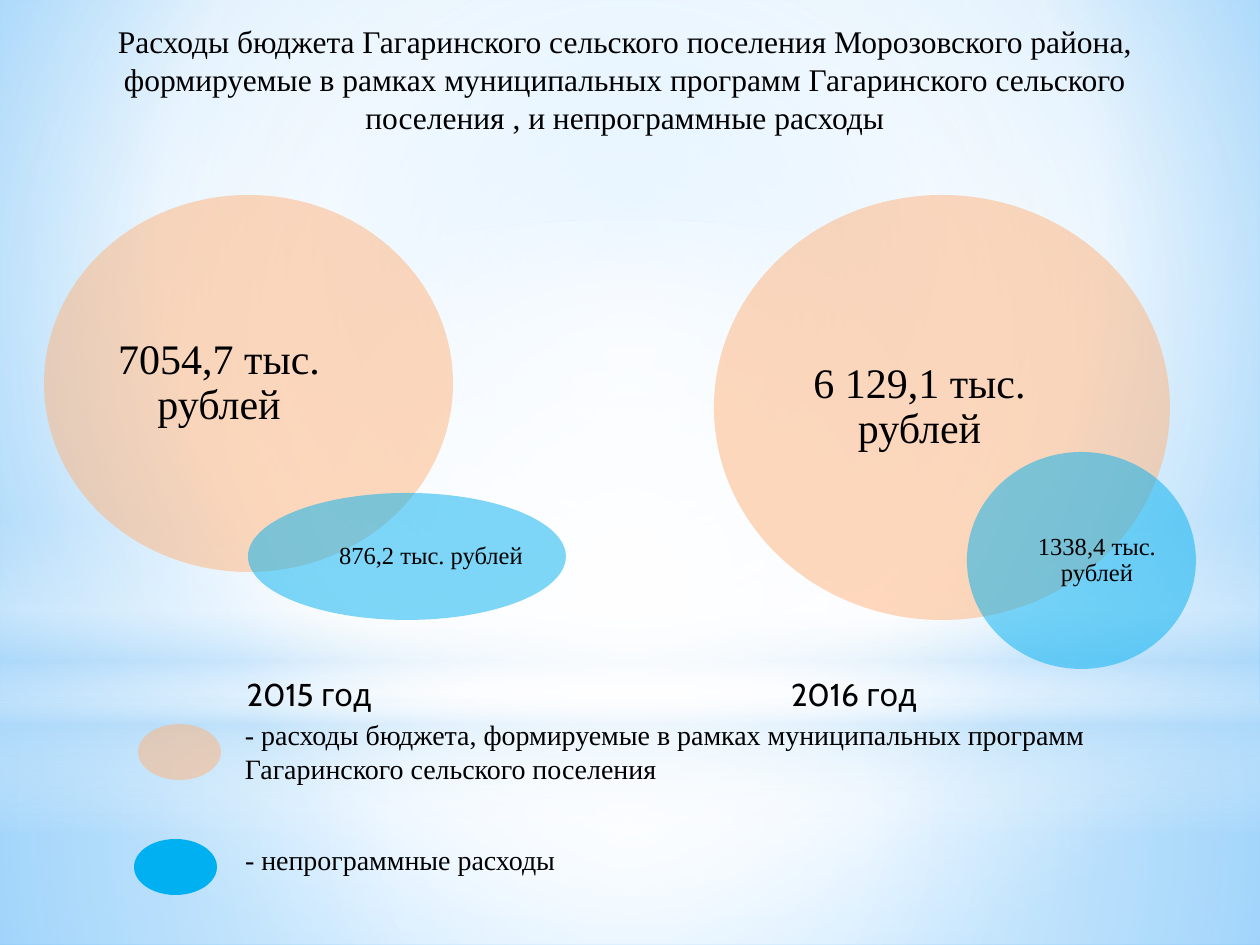
from pptx import Presentation
from pptx.dml.color import RGBColor
from pptx.enum.shapes import MSO_SHAPE as Shape
from pptx.enum.text import MSO_ANCHOR as Anchor, PP_ALIGN as Align
from pptx.oxml import parse_xml
from pptx.oxml.ns import nsdecls, qn
from pptx.util import Emu, Pt
from lxml.etree import SubElement

PX = 914400 / 126
WIDTH, HEIGHT = 1260, 945

BLACK = RGBColor(0x00, 0x00, 0x00)
WHITE = RGBColor(0xFF, 0xFF, 0xFF)
PEACH = RGBColor(0xFF, 0xB3, 0x7A)
AZURE = RGBColor(0x00, 0xB0, 0xF0)
SKY = RGBColor(0x9E, 0xD5, 0xFF)
DEEP_SKY = RGBColor(0x5B, 0xB9, 0xFF)
MIST = RGBColor(0xB4, 0xDC, 0xFA)

SERIF = "Times New Roman"
SANS = "Cabin"


def px(length):
    return Emu(round(length * PX))


def place(shape, box):
    shape.left, shape.top, shape.width, shape.height = map(px, box)


def radial(left=50, top=50, right=50, bottom=50):
    return (f'<a:path path="circle"><a:fillToRect l="{left * 1000}" t="{top * 1000}" '
            f'r="{right * 1000}" b="{bottom * 1000}"/></a:path>')


def linear(degrees):
    return f'<a:lin ang="{degrees * 60000}" scaled="0"/>'


def paint_gradient(owner, stops, direction):
    """Swap the solid fill inside owner for (position, colour, opacity) stops."""
    marks = "".join(
        f'<a:gs pos="{position * 1000}"><a:srgbClr val="{color}">'
        f'<a:alpha val="{opacity * 1000}"/></a:srgbClr></a:gs>'
        for position, color, opacity in stops)
    gradient = parse_xml(f'<a:gradFill {nsdecls("a")} rotWithShape="1">'
                         f'<a:gsLst>{marks}</a:gsLst>{direction}</a:gradFill>')
    solid = next(owner.iter(qn("a:solidFill")))
    solid.getparent().replace(solid, gradient)


def add_filled(slide, kind, box, color, opacity=100):
    shape = slide.shapes.add_shape(kind, *map(px, box))
    shape.shadow.inherit = False
    shape.line.fill.background()
    shape.fill.solid()
    shape.fill.fore_color.rgb = color
    if opacity < 100:
        tint = next(shape.element.iter(qn("a:srgbClr")))
        SubElement(tint, qn("a:alpha")).set("val", str(opacity * 1000))
    return shape


def write(shape, text, size, font=SERIF, align=Align.LEFT, anchor=Anchor.TOP,
          spacing=1.0, insets=(12, 6)):
    frame = shape.text_frame
    frame.word_wrap = True
    frame.vertical_anchor = anchor
    frame.margin_left = frame.margin_right = px(insets[0])
    frame.margin_top = frame.margin_bottom = px(insets[1])
    paragraph = frame.paragraphs[0]
    paragraph.alignment = align
    paragraph.line_spacing = spacing
    paragraph.space_before = Pt(0)
    run = paragraph.add_run()
    run.text = text
    run.font.size = Pt(size)
    run.font.name = font
    run.font.color.rgb = BLACK


def add_text(slide, box, text, size, **style):
    write(slide.shapes.add_textbox(*map(px, box)), text, size, **style)


def add_amount(slide, circle_box, label_box, text, size, color):
    add_filled(slide, Shape.OVAL, circle_box, color, opacity=50)
    add_text(slide, label_box, text, size, align=Align.CENTER,
             anchor=Anchor.MIDDLE, spacing=0.9, insets=(0, 0))


def add_backdrop(slide):
    slide.background.fill.solid()
    slide.background.fill.fore_color.rgb = WHITE
    paint_gradient(slide.element.find(".//" + qn("p:bgPr")),
                   [(0, SKY, 100), (60, WHITE, 100), (100, DEEP_SKY, 100)],
                   radial(20, 10, 20, 60))
    horizon = 703
    glows = [
        (Shape.RECTANGLE, horizon, HEIGHT - horizon,
         [(0, WHITE, 91), (37, WHITE, 76), (100, MIST, 79)], radial()),
        (Shape.RECTANGLE, 0, horizon,
         [(0, WHITE, 89), (48, WHITE, 62), (100, MIST, 79)], radial()),
        (Shape.RECTANGLE, 519, 315,
         [(0, WHITE, 0), (29, WHITE, 30), (45, MIST, 40), (55, WHITE, 26),
          (65, MIST, 60), (100, WHITE, 0)], linear(90)),
        (Shape.OVAL, 220, horizon,
         [(0, WHITE, 100), (56, WHITE, 0)], radial()),
    ]
    for kind, top, height, stops, direction in glows:
        glow = add_filled(slide, kind, (0, top, WIDTH, height), WHITE)
        paint_gradient(glow.element, stops, direction)


def add_title(slide, box, text):
    title = slide.shapes.title
    place(title, box)
    write(title, text, 18, align=Align.CENTER)
    title.element.getparent().append(title.element)  # in front of the backdrop


def main():
    deck = Presentation()
    deck.slide_width, deck.slide_height = px(WIDTH), px(HEIGHT)
    slide = deck.slides.add_slide(deck.slide_layouts[5])

    add_backdrop(slide)
    add_title(slide, (54, 16, 1142, 127),
              "Расходы бюджета Гагаринского сельского поселения Морозовского района, "
              "формируемые в рамках муниципальных программ Гагаринского сельского "
              "поселения , и непрограммные расходы")

    amounts = [
        ((714, 195, 456, 425), (757, 233, 325, 349), "6 129,1 тыс. рублей", 24, PEACH),
        ((967, 452, 229, 217), (1029, 475, 136, 171), "1338,4 тыс. рублей", 14, AZURE),
        ((44, 195, 409, 377), (101, 239, 236, 289), "7054,7 тыс. рублей", 24, PEACH),
        ((248, 493, 318, 127), (339, 508, 184, 97), "876,2 тыс. рублей", 14, AZURE),
    ]
    for amount in amounts:
        add_amount(slide, *amount)

    legend = [
        ((138, 724), PEACH, 50, (712, 973, 81),
         "- расходы бюджета, формируемые в рамках муниципальных программ "
         "Гагаринского сельского поселения"),
        ((134, 839), AZURE, 100, (837, 853, 47), "- непрограммные расходы"),
    ]
    for corner, color, opacity, (top, width, height), meaning in legend:
        add_filled(slide, Shape.OVAL, (*corner, 83, 56), color, opacity)
        add_text(slide, (233, top, width, height), meaning, 16)

    add_text(slide, (147, 669, 324, 50), "2015 год", 18, font=SANS, align=Align.CENTER)
    add_text(slide, (779, 669, 412, 50), "2016 год", 18, font=SANS)

    deck.save("out.pptx")


if __name__ == "__main__":
    main()
